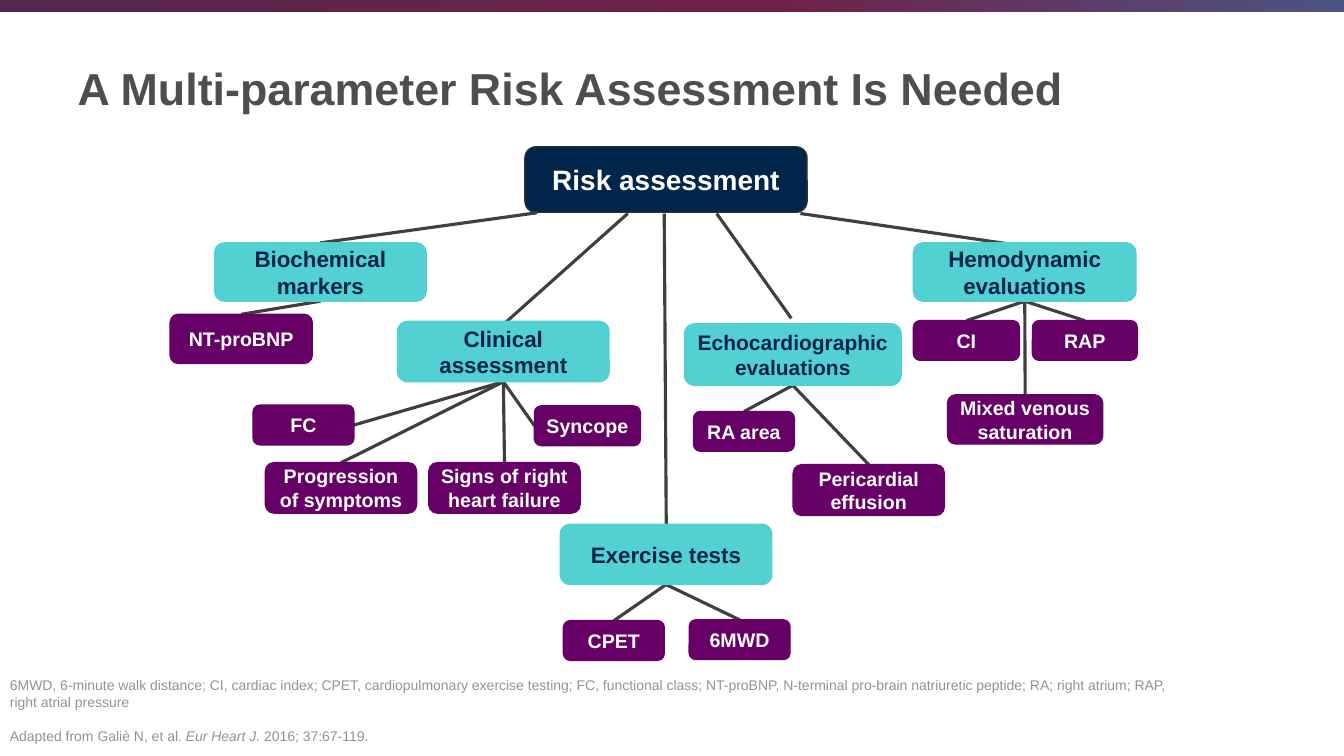
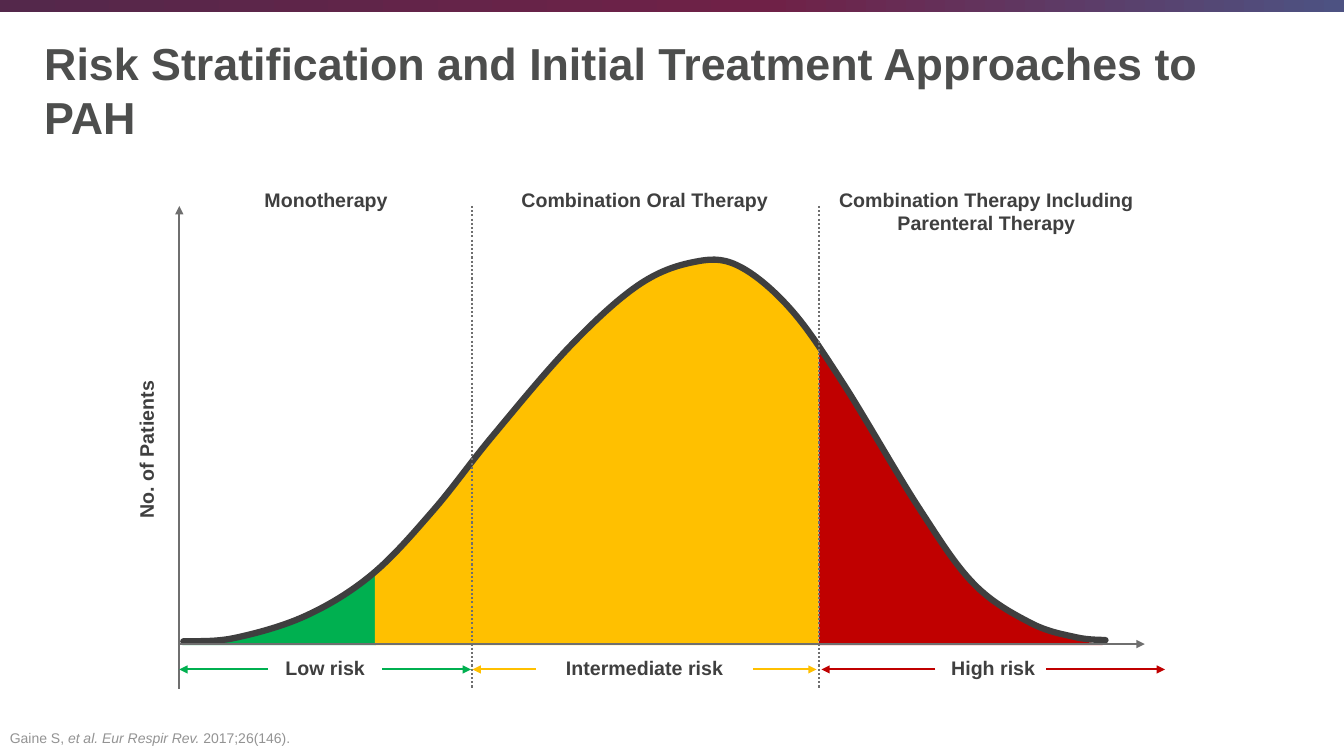
from collections import namedtuple
from copy import deepcopy

from pptx import Presentation
from pptx.dml.color import RGBColor
from pptx.enum import dml, shapes, text
from pptx.oxml import ns, xmlchemy
from pptx.util import Cm, Pt

FONT = "Arial"
WHITE = RGBColor(0xFF, 0xFF, 0xFF)
TITLE_GREY = RGBColor(0x4D, 0x4E, 0x4D)
NOTE_GREY = RGBColor(0x93, 0x93, 0x93)
DARK_GREY = RGBColor(0x3F, 0x3F, 0x3F)
AXIS_GREY = RGBColor(0x6F, 0x6F, 0x6F)
ROOT_EDGE = RGBColor(0x2F, 0x2F, 0x2F)
NAVY = RGBColor(0x00, 0x25, 0x4A)
TEAL = RGBColor(0x53, 0xD1, 0xD2)
PURPLE = RGBColor(0x66, 0x00, 0x66)
GREEN = RGBColor(0x00, 0xB0, 0x50)
AMBER = RGBColor(0xFF, 0xC0, 0x00)
RED = RGBColor(0xC0, 0x00, 0x00)
BAND_STOPS = [
    (0, RGBColor(0x54, 0x28, 0x4B)),
    (0.57, RGBColor(0x6F, 0x21, 0x47)),
    (1, RGBColor(0x4D, 0x52, 0x82)),
]

PAGE_WIDTH, PAGE_HEIGHT, BAND_HEIGHT = 33.87, 19.05, 0.3

Box = namedtuple("Box", "left top width height")
Branch = namedtuple("Branch", "label box size link leaves")
Leaf = namedtuple("Leaf", "label box side", defaults=["top"])
Zone = namedtuple("Zone", "label start end left_arrow right_arrow color")

ROOT = Box(8.94, 0.02, 7.11, 1.65)
BRANCHES = [
    Branch("Exercise tests", Box(9.83, 9.53, 5.33, 1.52), 16,
           [(12.45, 1.7), (12.5, 9.53)], [
        Leaf("6MWD", Box(13.08, 11.94, 2.54, 1)),
        Leaf("CPET", Box(9.91, 11.96, 2.54, 1)),
    ]),
    Branch("Biochemical markers", Box(1.12, 2.44, 5.33, 1.47), 16,
           [(9.25, 1.68), (3.78, 2.44)], [
        Leaf("NT-proBNP", Box(0, 4.24, 3.58, 1.24)),
    ]),
    Branch("Clinical assessment", Box(5.73, 4.42, 5.33, 1.52), 16,
           [(11.53, 1.7), (8.39, 4.5)], [
        Leaf("Signs of right heart failure", Box(6.52, 7.98, 3.81, 1.27)),
        Leaf("Progression of symptoms", Box(2.4, 7.98, 3.81, 1.27)),
        Leaf("FC", Box(2.09, 6.53, 2.54, 1), "right"),
        Leaf("Syncope", Box(9.18, 6.55, 2.67, 1), "left"),
    ]),
    Branch("Echocardiographic evaluations", Box(12.96, 4.48, 5.46, 1.55), 15,
           [(13.77, 1.7), (15.65, 4.34)], [
        Leaf("RA area", Box(13.19, 6.69, 2.54, 1)),
        Leaf("Pericardial effusion", Box(15.7, 8.03, 3.81, 1.28)),
    ]),
    Branch("Hemodynamic evaluations", Box(18.73, 2.44, 5.61, 1.47), 16,
           [(15.88, 1.7), (21.64, 2.54)], [
        Leaf("RAP", Box(21.73, 4.4, 2.64, 1)),
        Leaf("CI", Box(18.73, 4.4, 2.67, 1)),
        Leaf("Mixed venous\nsaturation", Box(19.59, 6.27, 3.91, 1.24)),
    ]),
]

CURVE = [
    (0.1, 11.56), (1.37, 11.48), (3.18, 10.92), (4.85, 9.88), (6.4, 8.26),
    (7.9, 6.38), (9.86, 4.11), (11.56, 2.59), (12.93, 2.01), (14.05, 2.08),
    (15.37, 3.15), (16.71, 5.03), (18.64, 8.2), (20.02, 10.11), (21.46, 11.1),
    (22.61, 11.46), (23.34, 11.53),
]
AREA_BASE = 11.66
AREAS = [
    (GREEN, [(0.08, 11.66), (0.86, 11.58), (2.16, 11.28), (3.58, 10.69),
             (4.5, 10.16), (4.95, 9.8)]),
    (AMBER, [(4.93, 9.88), (5.56, 9.19), (7.39, 7.01), (9.68, 4.29), (11.58, 2.64),
             (12.93, 2.01), (14.05, 2.08), (15.44, 3.2), (16.11, 4.17)]),
    (RED, [(16.12, 4.17), (16.87, 5.26), (17.91, 7.06), (18.8, 8.46), (19.56, 9.55),
           (20.52, 10.54), (21.87, 11.3), (23.27, 11.66)]),
]
BASELINE, AXIS_TOP, AXIS_END = 11.63, 0.59, 24.33
DIVIDERS = [7.37, 16.12]
THERAPIES = [
    ("Combination Oral Therapy", 7.6, 8.26),
    ("Monotherapy", 0.13, 7.14),
    ("Combination Therapy Including\vParenteral Therapy", 16.25, 8.18),
]
ZONES = [
    Zone("Low risk", 0, 7.35, 2.24, 2.24, GREEN),
    Zone("Intermediate risk", 7.39, 16.06, 1.6, 1.6, AMBER),
    Zone("High risk", 16.18, 24.84, 2.87, 2.99, RED),
]


def inside(frame, part):
    return Box(frame.left + part.left, frame.top + part.top, part.width, part.height)


def lengths(box):
    return [Cm(value) for value in box]


def anchor(box, side):
    across, down = {
        "top": (0.5, 0), "bottom": (0.5, 1), "left": (0, 0.5), "right": (1, 0.5),
    }[side]
    return box.left + across * box.width, box.top + down * box.height


def format_text(frame, size, color, bold=True, align=text.PP_ALIGN.CENTER):
    for para in frame.paragraphs:
        para.alignment = align
        for span in para.runs:
            span.font.name = FONT
            span.font.size = Pt(size)
            span.font.bold = bold
            span.font.color.rgb = color


def set_insets(frame, across, down=0):
    frame.margin_left = frame.margin_right = Cm(across)
    frame.margin_top = frame.margin_bottom = Cm(down)


def add_label(page, box, label, rotation=0):
    shape = page.shapes.add_textbox(*lengths(box))
    shape.rotation = rotation
    frame = shape.text_frame
    frame.word_wrap = True
    set_insets(frame, 0)
    frame.text = label
    format_text(frame, 14, DARK_GREY)


def add_line(page, start, end, color, width, arrow=False, dotted=False):
    line = page.shapes.add_connector(
        shapes.MSO_CONNECTOR.STRAIGHT, *lengths(start + end))
    line.line.color.rgb = color
    line.line.width = Pt(width)
    if dotted:
        line.line.dash_style = dml.MSO_LINE.ROUND_DOT
    properties = line.element.spPr
    if arrow:
        tip = xmlchemy.OxmlElement("a:tailEnd")
        tip.set("type", "triangle")
        properties.find(ns.qn("a:ln")).append(tip)
    properties.append(xmlchemy.OxmlElement("a:effectLst"))


def add_node(page, box, label, size, fill, color, edge=None):
    node = page.shapes.add_shape(
        shapes.MSO_SHAPE.ROUNDED_RECTANGLE, *lengths(box))
    node.shadow.inherit = False
    node.fill.solid()
    node.fill.fore_color.rgb = fill
    node.line.color.rgb = edge or fill
    node.line.width = Pt(1)
    frame = node.text_frame
    frame.word_wrap = True
    frame.vertical_anchor = text.MSO_ANCHOR.MIDDLE
    set_insets(frame, 0.2)
    frame.text = label
    format_text(frame, size, color)


def curve_points(knots):
    padded = [knots[0]] + knots + [knots[-1]]
    points = []
    for before, start, end, after in zip(padded, padded[1:], padded[2:], padded[3:]):
        points.append(tuple(b + (c - a) / 6 for a, b, c in zip(before, start, end)))
        points.append(tuple(c - (d - b) / 6 for b, c, d in zip(start, end, after)))
        points.append(end)
    return points


def add_curve(page, frame, knots, corners=()):
    points = [knots[0]] + curve_points(knots) + list(corners)
    placed = [(Cm(frame.left + x), Cm(frame.top + y)) for x, y in points]
    builder = page.shapes.build_freeform(*placed[0])
    builder.add_line_segments(placed[1:], close=bool(corners))
    outline = builder.convert_to_shape()
    outline.shadow.inherit = False
    steps = outline.element.spPr.findall(".//" + ns.qn("a:lnTo"))
    for first in range(0, 3 * (len(knots) - 1), 3):
        bend = xmlchemy.OxmlElement("a:cubicBezTo")
        steps[first].addprevious(bend)
        for step in steps[first:first + 3]:
            bend.append(step[0])
            step.getparent().remove(step)
    return outline


def add_band(deck, page):
    band = page.shapes.add_shape(
        shapes.MSO_SHAPE.RECTANGLE, *lengths(Box(0, 0, PAGE_WIDTH, BAND_HEIGHT)))
    band.shadow.inherit = False
    band.line.fill.background()
    band.fill.gradient()
    band.fill.gradient_angle = 0
    stop_list = band.element.spPr.find(".//" + ns.qn("a:gsLst"))
    stop_list.insert(1, deepcopy(stop_list[0]))
    for stop, (position, color) in zip(band.fill.gradient_stops, BAND_STOPS):
        stop.position = position
        stop.color.rgb = color
    deck.slide_master.shapes.element.insert(2, band.element)


def add_page(deck, title, title_box):
    page = deck.slides.add_slide(deck.slide_layouts[5])
    holder = page.shapes.title
    holder.left, holder.top, holder.width, holder.height = lengths(title_box)
    frame = holder.text_frame
    frame.text = title
    frame.word_wrap = True
    frame.auto_size = text.MSO_AUTO_SIZE.NONE
    frame.vertical_anchor = text.MSO_ANCHOR.MIDDLE
    format_text(frame, 32, TITLE_GREY, align=text.PP_ALIGN.LEFT)
    return page


def add_source_note(page, box, lines):
    frame = page.shapes.add_textbox(*lengths(box)).text_frame
    frame.word_wrap = True
    frame.vertical_anchor = text.MSO_ANCHOR.BOTTOM
    for index, spans in enumerate(lines):
        para = frame.add_paragraph() if index else frame.paragraphs[0]
        para.space_before = Pt(12 if index else 0)
        for words, italic in spans:
            span = para.add_run()
            span.text = words
            span.font.italic = italic
    format_text(frame, 10, NOTE_GREY, False, text.PP_ALIGN.LEFT)


def add_risk_tree(page, frame):
    add_node(page, inside(frame, ROOT), "Risk assessment", 20, NAVY, WHITE, ROOT_EDGE)
    for branch in BRANCHES:
        branch_box = inside(frame, branch.box)
        start, end = [(frame.left + x, frame.top + y) for x, y in branch.link]
        add_line(page, start, end, DARK_GREY, 2.25)
        for leaf in branch.leaves:
            leaf_box = inside(frame, leaf.box)
            add_line(page, anchor(branch_box, "bottom"),
                     anchor(leaf_box, leaf.side), DARK_GREY, 2.25)
            add_node(page, leaf_box, leaf.label, 14, PURPLE, WHITE)
        add_node(page, branch_box, branch.label, branch.size, TEAL, NAVY)


def add_distribution(page, frame):
    def at(x, y):
        return frame.left + x, frame.top + y

    for color, knots in AREAS:
        ends = [(knots[-1][0], AREA_BASE), (knots[0][0], AREA_BASE)]
        corners = [corner for corner in ends if corner not in knots]
        area = add_curve(page, frame, knots, corners)
        area.fill.solid()
        area.fill.fore_color.rgb = color
        area.line.fill.background()
    outline = add_curve(page, frame, CURVE)
    outline.fill.background()
    outline.line.color.rgb = DARK_GREY
    outline.line.width = Pt(4.5)
    outline.element.spPr.find(ns.qn("a:ln")).set("cap", "rnd")

    add_line(page, at(0, BASELINE), at(AXIS_END, BASELINE), AXIS_GREY, 1.5, arrow=True)
    add_line(page, at(0, frame.height), at(0, AXIS_TOP), AXIS_GREY, 1.5, arrow=True)
    for x in DIVIDERS:
        add_line(page, at(x, AXIS_TOP), at(x, frame.height), AXIS_GREY, 1.5, dotted=True)
    for label, left, width in THERAPIES:
        add_label(page, inside(frame, Box(left, 0.13, width, 0.6)), label)
    add_label(page, inside(frame, Box(-5.81, 6.42, 9.96, 0.61)), "No. of Patients", 270)
    for zone in ZONES:
        label_box = Box(zone.start, 11.94, zone.end - zone.start, 0.61)
        add_label(page, inside(frame, label_box), zone.label)
        for tip, inner in ((zone.end, zone.end - zone.right_arrow),
                           (zone.start, zone.start + zone.left_arrow)):
            add_line(page, at(inner, 12.27), at(tip, 12.27), zone.color, 1.5, arrow=True)


def main():
    deck = Presentation()
    deck.slide_width, deck.slide_height = Cm(PAGE_WIDTH), Cm(PAGE_HEIGHT)

    page = add_page(deck, "A Multi-parameter Risk Assessment Is Needed",
                    Box(1.7, 0.56, 29.85, 3.3))
    add_band(deck, page)
    add_risk_tree(page, Box(4.29, 3.68, 24.36, 12.95))
    add_source_note(page, Box(0, 17.65, 29.85, 1.22), [
        [("6MWD, 6-minute walk distance; CI, cardiac index; CPET, cardiopulmonary "
          "exercise testing; FC, functional class; NT-proBNP, N-terminal pro-brain "
          "natriuretic peptide; RA; right atrium; RAP, right atrial pressure", False)],
        [("Adapted from Galiè N, et al. ", False), ("Eur Heart J. ", True),
         ("2016; 37:67-119.", False)],
    ])

    page = add_page(deck, "Risk Stratification and Initial Treatment Approaches to PAH",
                    Box(0.86, 0.61, 32.16, 3.3))
    add_distribution(page, Box(4.52, 4.6, 24.84, 12.75))
    add_source_note(page, Box(0, 17.7, 29.85, 1.22), [
        [("Gaine S, ", False), ("et al. Eur Respir Rev.", True), (" 2017;26(146).", False)],
    ])
    deck.save("out.pptx")


if __name__ == "__main__":
    main()
